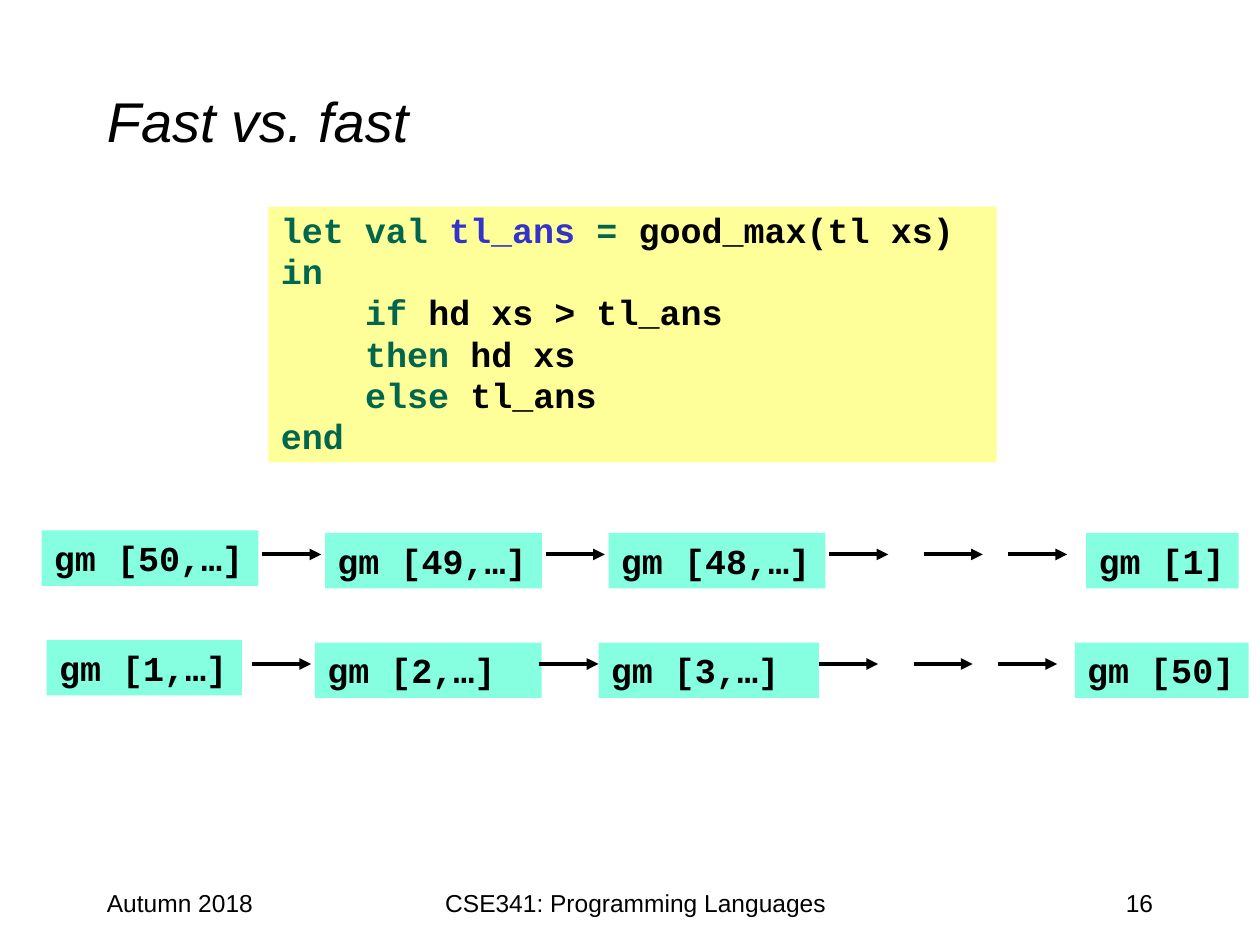
"""Build the "Fast vs. fast" slide: a code box above two chains of recursive calls."""
import pptx
import pptx.dml.color
import pptx.enum.shapes
import pptx.enum.text
import pptx.oxml
import pptx.util
from pptx.util import Inches

BLACK = pptx.dml.color.RGBColor(0x00, 0x00, 0x00)
GREEN = pptx.dml.color.RGBColor(0x00, 0x66, 0x4D)
BLUE = pptx.dml.color.RGBColor(0x33, 0x33, 0xCC)
YELLOW = pptx.dml.color.RGBColor(0xFF, 0xFF, 0x99)
AQUA = pptx.dml.color.RGBColor(0x85, 0xFF, 0xE0)
ALIGN = pptx.enum.text.PP_ALIGN
ANCHOR = pptx.enum.text.MSO_ANCHOR


def style(p, font, size, align=ALIGN.LEFT):
    p.alignment = align
    p.font.name = font
    p.font.size = pptx.util.Pt(size)
    p.font.color.rgb = BLACK


def add_box(x, y, w, h, fill):
    sp = s.shapes.add_shape(pptx.enum.shapes.MSO_SHAPE.RECTANGLE,
                            Inches(x), Inches(y), Inches(w), Inches(h))
    sp.shadow.inherit = False
    sp.fill.solid()
    sp.fill.fore_color.rgb = fill
    sp.line.fill.background()
    sp.text_frame.vertical_anchor = ANCHOR.TOP
    return sp.text_frame


prs = pptx.Presentation()
prs.slide_width, prs.slide_height = Inches(10), Inches(7.5)
s = prs.slides.add_slide(prs.slide_layouts[6])

labels = [
    ("Fast vs. fast", 0.75, 0.33, 8.5, 1.25, 32, ALIGN.LEFT),
    ("Autumn 2018", 0.75, 7, 2.08, 0.5, 14, ALIGN.LEFT),
    ("CSE341: Programming Languages", 3.17, 7, 3.75, 0.5, 14, ALIGN.CENTER),
    ("16", 7.17, 7, 2.08, 0.5, 14, ALIGN.RIGHT),
]
for text, x, y, w, h, size, align in labels:
    tf = s.shapes.add_textbox(Inches(x), Inches(y), Inches(w), Inches(h)).text_frame
    tf.word_wrap = True
    p = tf.paragraphs[0]
    p.text = text
    style(p, "Arial", size, align)
    if size == 32:
        tf.vertical_anchor = ANCHOR.MIDDLE
        p.font.italic = True

code = [
    (0, [("let val ", GREEN), ("tl_ans ", BLUE), ("= ", GREEN), ("good_max(tl xs)", BLACK)]),
    (0, [("in", GREEN)]),
    (0.67, [("if ", GREEN), ("hd xs > tl_ans", BLACK)]),
    (0.67, [("then ", GREEN), ("hd xs", BLACK)]),
    (0.67, [("else ", GREEN), ("tl_ans", BLACK)]),
    (0, [("end", GREEN)]),
]
tf = add_box(2.13, 1.64, 5.78, 2.03, YELLOW)
for i, (indent, runs) in enumerate(code):
    p = tf.add_paragraph() if i else tf.paragraphs[0]
    style(p, "Courier New", 20)
    p.font.bold = True
    p.line_spacing = 0.9
    p.space_before = pptx.util.Pt(2)
    p._p.get_or_add_pPr().set("marL", str(Inches(indent)))
    for text, color in runs:
        r = p.add_run()
        r.text = text
        r.font.color.rgb = color

chains = [
    (4.21, 4.4, [("gm [50,…]", 0.33, 1.72), ("gm [49,…]", 2.58, 1.72),
                 ("gm [48,…]", 4.83, 1.72), ("gm [1]", 8.62, 1.21)],
     [2.08, 4.33, 6.58, 7.33, 8]),
    (5.08, 5.27, [("gm [1,…]", 0.37, 1.55), ("gm [2,…]", 2.5, 1.8),
                  ("gm [3,…]", 4.75, 1.75), ("gm [50]", 8.53, 1.38)],
     [2, 4.28, 6.5, 7.25, 7.92]),
]
for top, arrow_y, calls, arrows in chains:
    for i, (text, x, w) in enumerate(calls):
        tf = add_box(x, top + (0.02 if i else 0), w, 0.44, AQUA)
        tf.word_wrap = w in (1.8, 1.75)
        tf.auto_size = pptx.enum.text.MSO_AUTO_SIZE.SHAPE_TO_FIT_TEXT
        p = tf.paragraphs[0]
        p.text = text
        style(p, "Courier New", 20)
        p.font.bold = True
        p.space_before = pptx.util.Pt(2)
    for x in arrows:
        c = s.shapes.add_connector(pptx.enum.shapes.MSO_CONNECTOR.STRAIGHT, Inches(x),
                                   Inches(arrow_y), Inches(x + 0.47), Inches(arrow_y))
        c.line.color.rgb = BLACK
        c.line.width = pptx.util.Pt(2.25)
        tail = pptx.oxml.xmlchemy.OxmlElement("a:tailEnd")
        tail.set("type", "triangle")
        c.line._get_or_add_ln().append(tail)
        c._element.spPr.append(pptx.oxml.xmlchemy.OxmlElement("a:effectLst"))

prs.save("out.pptx")
